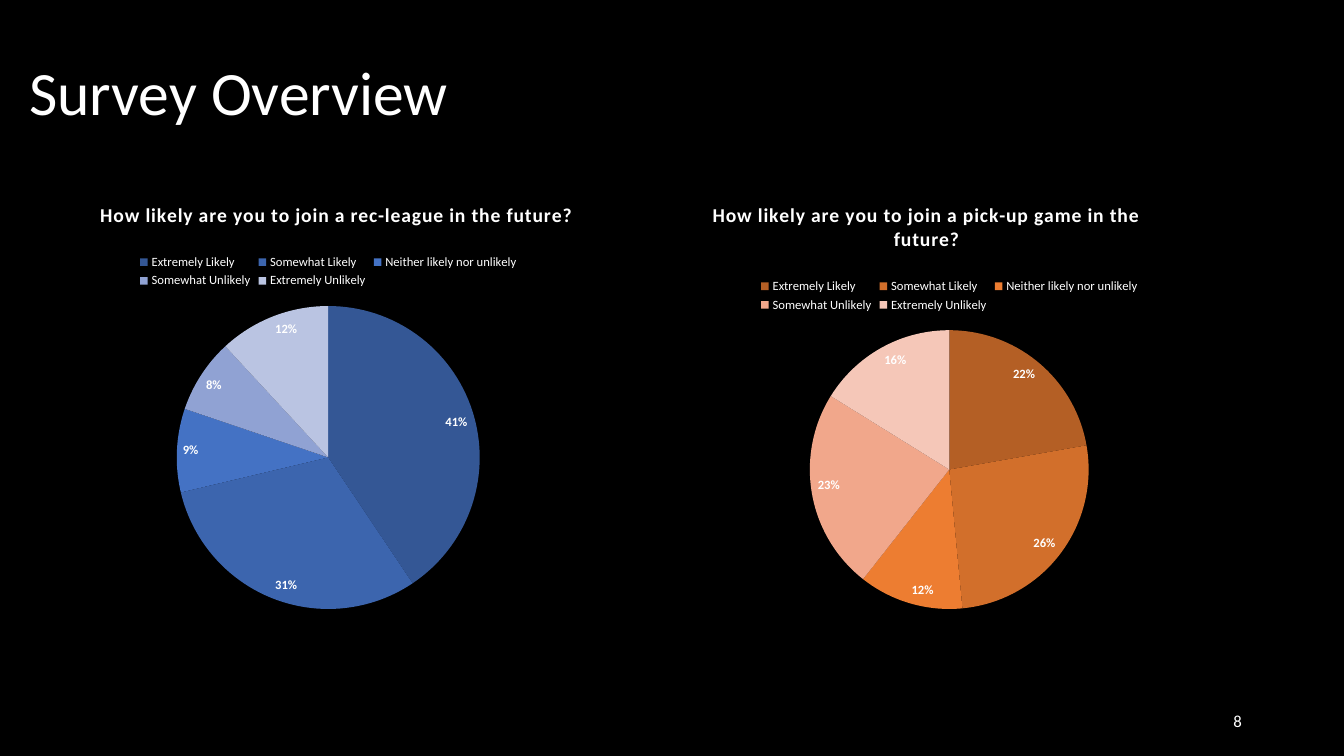
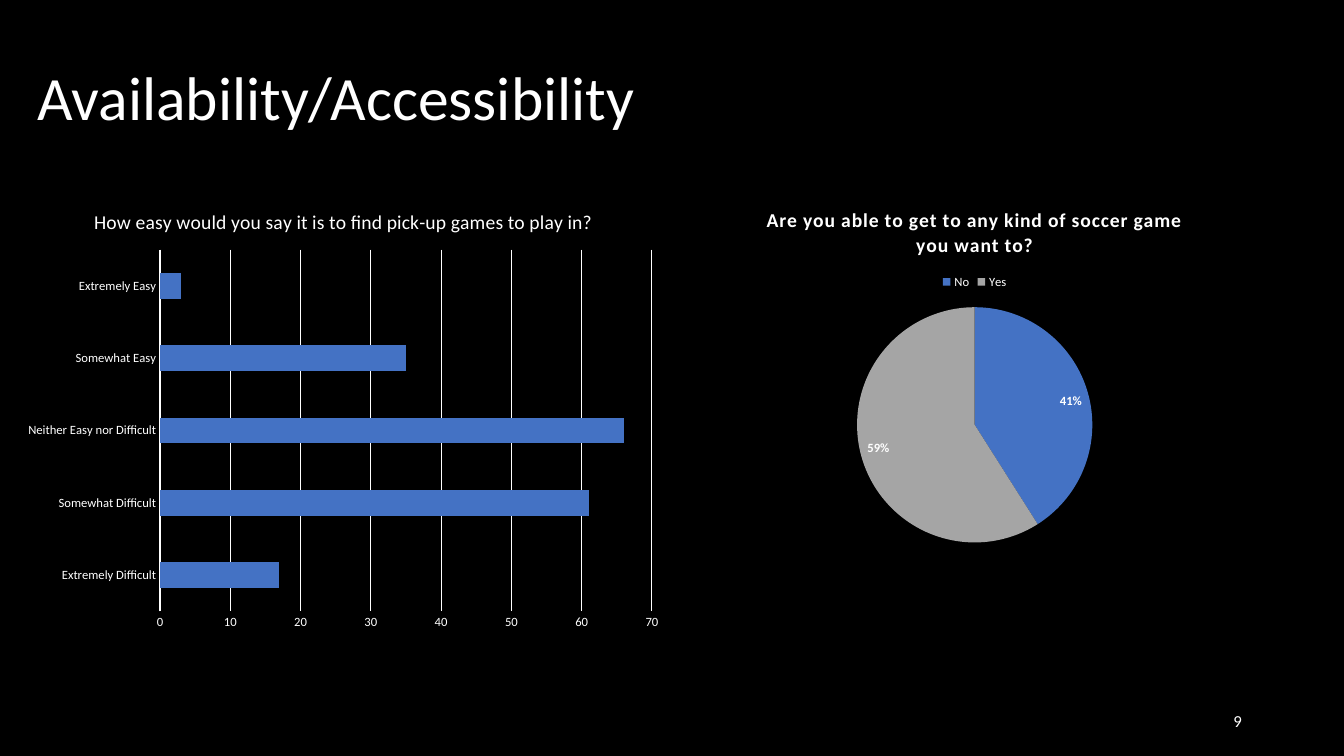
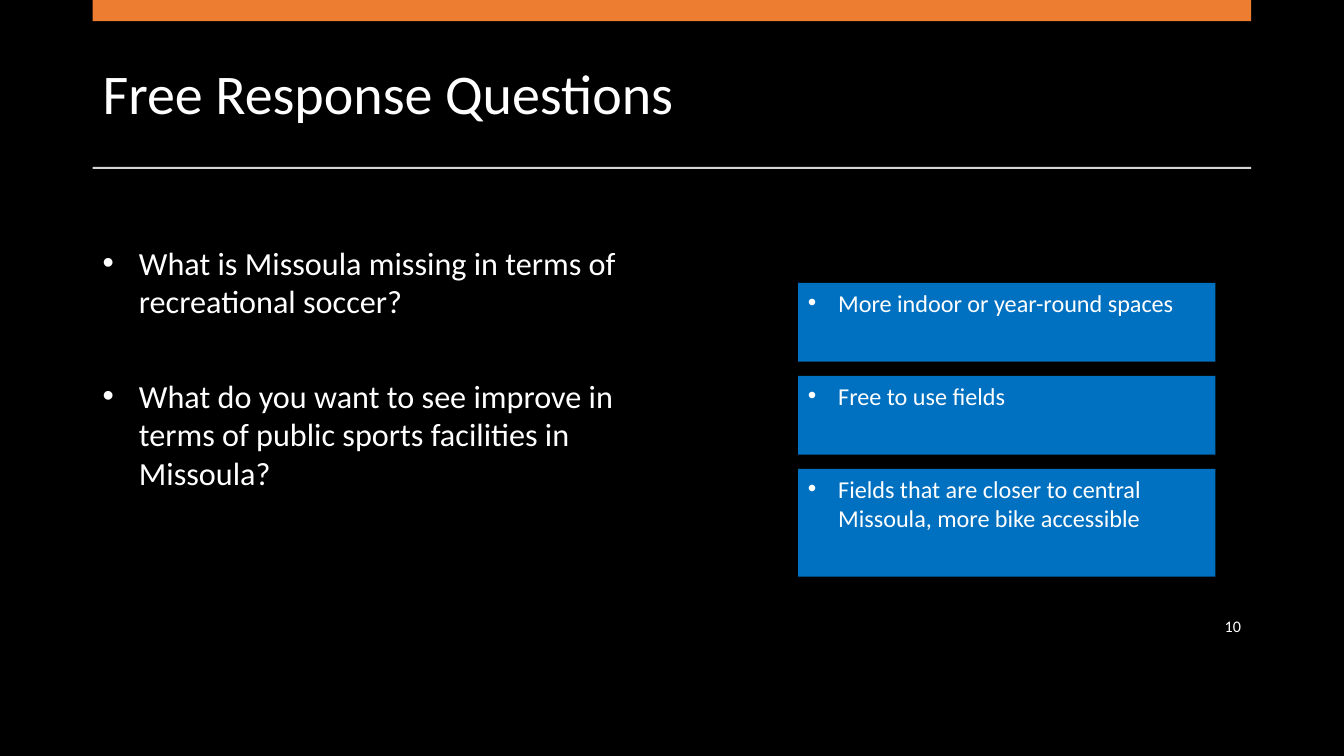
"""Build three dark survey slides with charts, questions and answer cards."""
import dataclasses

import lxml.etree
import pptx
import pptx.chart.data
import pptx.dml.color
import pptx.enum.chart
import pptx.enum.shapes
import pptx.enum.text
import pptx.oxml.ns
import pptx.util


@dataclasses.dataclass(frozen=True)
class Theme:
    font: str = "Calibri"
    bullet_font: str = "Arial"
    back: str = "000000"
    text: str = "FFFFFF"
    accent: str = "ED7D31"
    rule: str = "D5D5D5"
    card: str = "0070C0"
    bar: str = "4472C4"
    blues: tuple = ("345795", "3C65AE", "4472C4", "90A2D3", "BAC4E2")
    oranges: tuple = ("B45F25", "D26F2B", "ED7D31", "F1A78B", "F5C7B8")
    pair: tuple = ("4472C4", "A5A5A5")
    title: float = 44
    section: float = 40
    question: float = 23
    answer: float = 17.3
    chart_title: float = 14
    number: float = 12
    chart: float = 10
    label: float = 9
    hairline: float = 0.75


THEME = Theme()
LIKELIHOOD = ("Extremely Likely", "Somewhat Likely", "Neither likely nor unlikely",
              "Somewhat Unlikely", "Extremely Unlikely")
EASE = ("Extremely Difficult", "Somewhat Difficult", "Neither Easy nor Difficult",
        "Somewhat Easy", "Extremely Easy")


def rgb(color):
    return pptx.dml.color.RGBColor.from_string(color)


def add_xml(parent, tag, **attributes):
    return lxml.etree.SubElement(parent, pptx.oxml.ns.qn(tag), **attributes)


def set_font(font, size, bold=False):
    font.name, font.size, font.bold = THEME.font, pptx.util.Pt(size), bold
    font.color.rgb = rgb(THEME.text)


def write(tf, text, size, bold=False, align=None, line=None, after=None,
          bullet=None, tracking=None):
    p = tf.paragraphs[0]
    if p.runs:
        p = tf.add_paragraph()
    if align is not None:
        p.alignment = align
    if line is not None:
        p.line_spacing = line
    if after is not None:
        p.space_after = pptx.util.Pt(after)
    if bullet is not None:
        pPr = p._p.get_or_add_pPr()
        indent = pptx.util.Inches(bullet)
        pPr.set("marL", str(indent))
        pPr.set("indent", str(-indent))
        add_xml(pPr, "a:buFont", typeface=THEME.bullet_font)
        add_xml(pPr, "a:buChar", char="•")
    r = p.add_run()
    r.text = text
    set_font(r.font, size, bold)
    if tracking is not None:
        r._r.get_or_add_rPr().set("spc", str(tracking))


def place_title(chart, x, y):
    title = chart.chart_title._element
    for old in title.findall(pptx.oxml.ns.qn("c:layout")):
        title.remove(old)
    layout = add_xml(title, "c:layout")
    title.find(pptx.oxml.ns.qn("c:tx")).addnext(layout)
    manual = add_xml(layout, "c:manualLayout")
    for tag, val in (("c:xMode", "edge"), ("c:yMode", "edge"), ("c:x", x), ("c:y", y)):
        add_xml(manual, tag, val=str(val))


class Deck:
    def __init__(self):
        self.prs = pptx.Presentation()
        self.prs.slide_width = pptx.util.Inches(40 / 3)
        self.prs.slide_height = pptx.util.Inches(7.5)
        self.s = None

    def box(self, x, y, w, h):
        width, height = self.prs.slide_width, self.prs.slide_height
        return [round(share * side / 100)
                for share, side in zip((x, y, w, h), (width, height, width, height))]

    def slide(self):
        self.s = self.prs.slides.add_slide(self.prs.slide_layouts[6])
        fill = self.s.background.fill
        fill.solid()
        fill.fore_color.rgb = rgb(THEME.back)

    def text(self, at, middle=True):
        tf = self.s.shapes.add_textbox(*self.box(*at)).text_frame
        tf.word_wrap = True
        anchor = pptx.enum.text.MSO_ANCHOR
        tf.vertical_anchor = anchor.MIDDLE if middle else anchor.TOP
        return tf

    def title(self, text, at, size=THEME.title):
        write(self.text(at), text, size, line=0.9)

    def number(self, text, at=(70.65, 92.67, 22.5, 5.33), size=THEME.number):
        write(self.text(at), text, size, align=pptx.enum.text.PP_ALIGN.RIGHT)

    def rect(self, at, color):
        sp = self.s.shapes.add_shape(pptx.enum.shapes.MSO_SHAPE.RECTANGLE, *self.box(*at))
        sp.shadow.inherit = False
        sp.fill.solid()
        sp.fill.fore_color.rgb = rgb(color)
        sp.line.fill.background()
        return sp

    def card(self, text, at):
        tf = self.rect(at, THEME.card).text_frame
        tf.word_wrap = True
        tf.vertical_anchor = pptx.enum.text.MSO_ANCHOR.TOP
        write(tf, text, THEME.answer, align=pptx.enum.text.PP_ALIGN.LEFT,
              after=6, bullet=0.3)

    def chart(self, kind, title, cats, vals, at, **title_format):
        data = pptx.chart.data.CategoryChartData()
        data.categories = cats
        data.add_series(title, vals)
        chart = self.s.shapes.add_chart(kind, *self.box(*at), data).chart
        set_font(chart.font, THEME.chart)
        chart.has_title = True
        write(chart.chart_title.text_frame, title, THEME.chart_title, **title_format)
        return chart

    def pie(self, title, cats, vals, colors, at, title_at=None):
        chart = self.chart(pptx.enum.chart.XL_CHART_TYPE.PIE, title, cats, vals, at,
                           bold=True, tracking=50)
        if title_at is not None:
            place_title(chart, *title_at)
        chart.has_legend = True
        chart.legend.position = pptx.enum.chart.XL_LEGEND_POSITION.TOP
        chart.legend.include_in_layout = False
        set_font(chart.legend.font, THEME.label)
        plot = chart.plots[0]
        plot.vary_by_categories = True
        for i, color in enumerate(colors):
            fill = plot.series[0].points[i].format.fill
            fill.solid()
            fill.fore_color.rgb = rgb(color)
        plot.has_data_labels = True
        labels = plot.data_labels
        labels.show_value, labels.show_percentage = False, True
        labels.number_format, labels.number_format_is_linked = "0%", False
        labels.position = pptx.enum.chart.XL_LABEL_POSITION.INSIDE_END
        set_font(labels.font, THEME.label, bold=True)

    def bars(self, title, cats, vals, top, step, at):
        chart = self.chart(pptx.enum.chart.XL_CHART_TYPE.BAR_CLUSTERED,
                           title, cats, vals, at)
        chart.has_legend = False
        plot = chart.plots[0]
        plot.vary_by_categories = False
        plot.gap_width = 182
        fill = plot.series[0].format.fill
        fill.solid()
        fill.fore_color.rgb = rgb(THEME.bar)
        cat, val = chart.category_axis, chart.value_axis
        for axis in (cat, val):
            axis.major_tick_mark = pptx.enum.chart.XL_TICK_MARK.NONE
            axis.minor_tick_mark = pptx.enum.chart.XL_TICK_MARK.NONE
            set_font(axis.tick_labels.font, THEME.label)
        val.minimum_scale, val.maximum_scale, val.major_unit = 0, top, step
        val.has_major_gridlines = True
        val.format.line.fill.background()
        for line in (cat.format.line, val.major_gridlines.format.line):
            line.color.rgb = rgb(THEME.text)
            line.width = pptx.util.Pt(THEME.hairline)


def main():
    deck = Deck()

    deck.slide()
    deck.title("Survey Overview", (1.43, 2.93, 86.27, 19.33))
    deck.number("8")
    deck.pie("How likely are you to join a rec-league in the future?", LIKELIHOOD,
             (41, 31, 9, 8, 12), THEME.blues, (1.13, 25.6, 46.59, 56.8), (0.13, 0.01))
    deck.pie("How likely are you to join a pick-up game in the future?", LIKELIHOOD,
             (22, 26, 12, 23, 16), THEME.oranges, (47.71, 25.6, 45.84, 56.8),
             (0.11, 0.01))

    deck.slide()
    deck.title("Availability/Accessibility", (2.03, 3.6, 86.27, 19.33))
    deck.number("9")
    deck.pie("Are you able to get to any kind of soccer game you want to?", ("No", "Yes"),
             (41, 59), THEME.pair, (51.9, 25.2, 41.25, 48.4))
    deck.bars("How easy would you say it is to find pick-up games to play in?", EASE,
              (17, 61, 66, 35, 3), 70, 10, (1.13, 25.2, 48.84, 59.33))

    deck.slide()
    left, width = 6.9, 86.2
    deck.title("Free Response Questions", (left, 4.93, width, 15.73), THEME.section)
    deck.rect((left, 0, width, 2.8), THEME.accent)
    deck.rect((left, 22.08, width, 0.27), THEME.rule)
    deck.number("10", (71.33, 80.2, 21.75, 5.2), 11.5)
    questions = deck.text((left, 31.47, 44.8, 34.67), middle=False)
    for question in ("What is Missoula missing in terms of recreational soccer?",
                     "What do you want to see improve in terms of public sports "
                     "facilities in Missoula?"):
        write(questions, question, THEME.question, after=40, bullet=0.36)
    top, gap = 37.43, 1.9
    for answer, height in (
            ("More indoor or year-round spaces", 10.4),
            ("Free to use fields", 10.4),
            ("Fields that are closer to central Missoula, more bike accessible", 14.27)):
        deck.card(answer, (59.38, top, 31.05, height))
        top += height + gap

    deck.prs.save("out.pptx")


if __name__ == "__main__":
    main()
